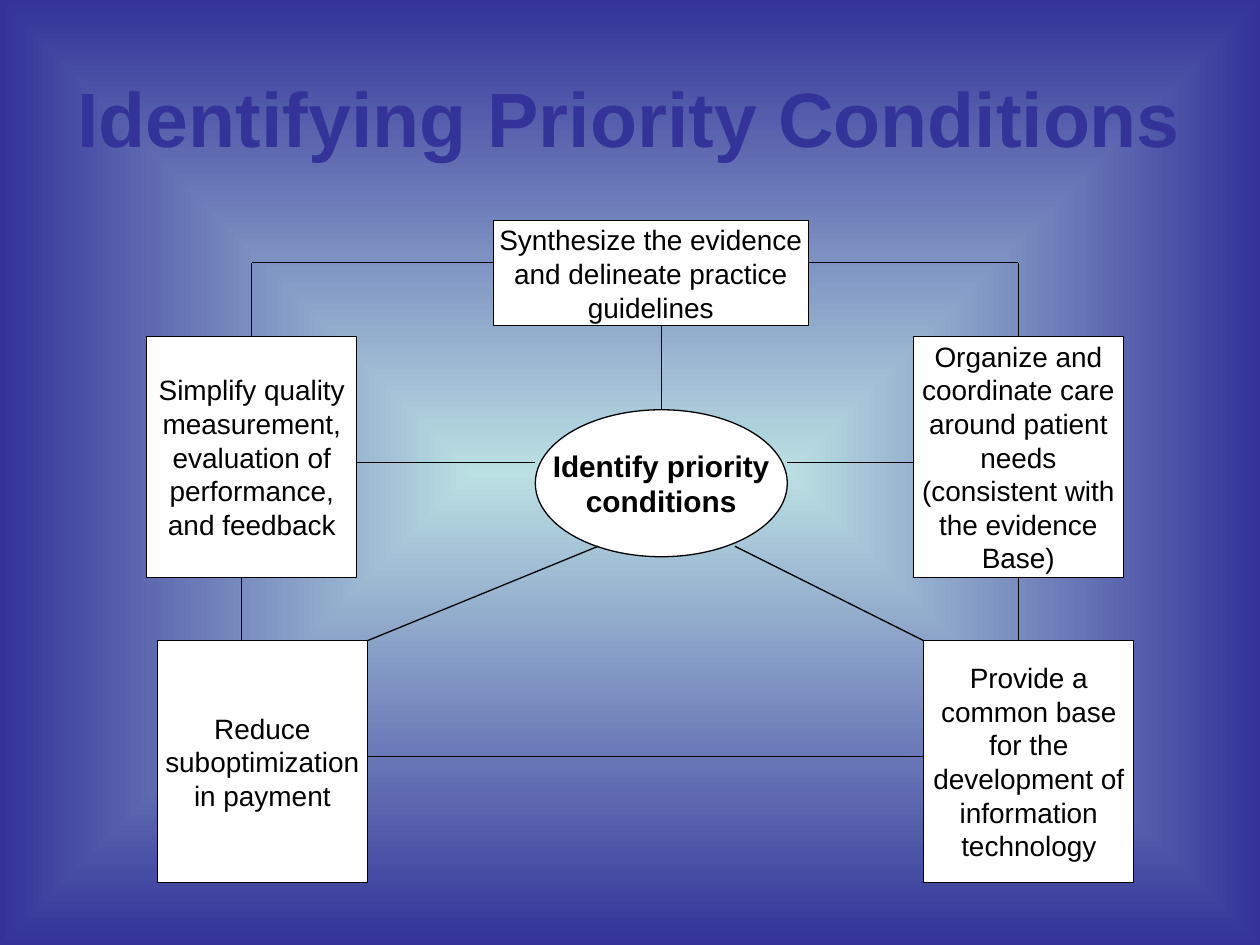
from lxml import etree
from pptx import Presentation
from pptx.dml.color import RGBColor
from pptx.enum.shapes import MSO_CONNECTOR, MSO_SHAPE
from pptx.enum.text import MSO_ANCHOR, PP_ALIGN
from pptx.oxml.ns import qn
from pptx.util import Cm, Pt

COLORS = {"center": "BBE0E3", "navy": "333399", "box": "FFFFFF", "ink": "000000"}
FONT = "Arial"
GRID = 2.54 / 12  # diagram grid step in cm

# name: (left, top, width, height) in grid steps from the diagram corner, lines
BOXES = {
    "synthesize": ((33, 0, 30, 10), ["Synthesize the evidence",
                                     "and delineate practice", "guidelines"]),
    "organize": ((73, 11, 20, 23), ["Organize and", "coordinate care", "around patient",
                                    "needs", "(consistent with", "the evidence", "Base)"]),
    "provide": ((74, 40, 20, 23), ["Provide a", "common base", "for the",
                                   "development of", "information", "technology"]),
    "reduce": ((1, 40, 20, 23), ["Reduce", "suboptimization", "in payment"]),
    "simplify": ((0, 11, 20, 23), ["Simplify quality", "measurement,", "evaluation of",
                                   "performance,", "and feedback"]),
}
HUB = ((37, 18, 24, 14), ["Identify priority", "conditions"])

# start, end in grid steps, then the joined (box, side) at the start and at the end
LINKS = [
    ((49, 10), (49, 18), None, ("hub", 0)),
    ((9, 34), (9, 40), None, None),
    ((83, 34), (83, 40), ("organize", 2), None),
    ((20, 23), (37, 23), None, None),
    ((61, 23), (73, 23), None, None),
    ((21, 51), (74, 51), None, None),
    ((33, 4), (10, 4), None, None),
    ((10, 4), (10, 11), None, ("simplify", 0)),
    ((83, 11), (83, 4), ("organize", 0), None),
    ((63, 4), (83, 4), None, None),
    ((21, 40), (43, 31), None, None),
    ((74, 40), (56, 31), None, None),
]


def rgb(name):
    return RGBColor.from_string(COLORS[name])


def write(sp, lines, size, color, bold=False, wrap=False):
    tf = sp.text_frame
    tf.word_wrap = wrap
    tf.vertical_anchor = MSO_ANCHOR.MIDDLE
    for i, line in enumerate(lines):
        p = tf.paragraphs[0] if i == 0 else tf.add_paragraph()
        p.alignment = PP_ALIGN.CENTER
        r = p.add_run()
        r.text = line
        r.font.name, r.font.size, r.font.bold = FONT, Pt(size), bold
        r.font.color.rgb = rgb(color)


def paint_background(s):
    fill = s.background.fill
    fill.gradient()
    for stop, name in zip(fill.gradient_stops, ("center", "navy")):
        stop.color.rgb = rgb(name)
    # Shade from the center out to the slide edges
    grad = s.element.find(".//" + qn("a:gradFill"))
    grad.remove(grad.find(qn("a:lin")))
    shade = etree.SubElement(grad, qn("a:path"), path="shape")
    etree.SubElement(shade, qn("a:fillToRect"), l="50000", t="50000", r="50000", b="50000")


def add_title(s, left, top, width, height):
    sp = s.shapes.add_textbox(left, top, width, height)
    write(sp, ["Identifying Priority Conditions"], 44, "navy", bold=True, wrap=True)


def add_node(s, kind, box, lines, size, bold=False):
    sp = s.shapes.add_shape(kind, *box)
    sp.shadow.inherit = False
    sp.fill.solid()
    sp.fill.fore_color.rgb = rgb("box")
    sp.line.color.rgb = rgb("ink")
    sp.line.width = Pt(0.75)
    write(sp, lines, size, "ink", bold)
    return sp


def add_link(s, start, end):
    line = s.shapes.add_connector(MSO_CONNECTOR.STRAIGHT, *start, *end)
    line.line.color.rgb = rgb("ink")
    line.line.width = Pt(0.75)
    etree.SubElement(line.element.spPr, qn("a:effectLst"))
    return line


def add_diagram(s, left, top):
    def point(x, y):
        return left + Cm(x * GRID), top + Cm(y * GRID)

    def frame(x, y, w, h):
        return (*point(x, y), Cm(w * GRID), Cm(h * GRID))

    # Boxes around the central ellipse
    nodes = {name: add_node(s, MSO_SHAPE.RECTANGLE, frame(*box), lines, 16)
             for name, (box, lines) in BOXES.items()}
    nodes["hub"] = add_node(s, MSO_SHAPE.OVAL, frame(*HUB[0]), HUB[1], 17, bold=True)

    # Lines between them
    for start, end, begin_at, end_at in LINKS:
        line = add_link(s, point(*start), point(*end))
        if begin_at:
            line.begin_connect(nodes[begin_at[0]], begin_at[1])
        if end_at:
            line.end_connect(nodes[end_at[0]], end_at[1])


def main():
    prs = Presentation()
    prs.slide_width, prs.slide_height = Cm(25.4), Cm(19.05)
    s = prs.slides.add_slide(prs.slide_layouts[6])
    paint_background(s)
    add_title(s, Cm(1.27), Cm(0.76), Cm(22.86), Cm(3.18))
    add_diagram(s, Cm(2.96), Cm(4.45))
    prs.save("out.pptx")


if __name__ == "__main__":
    main()
